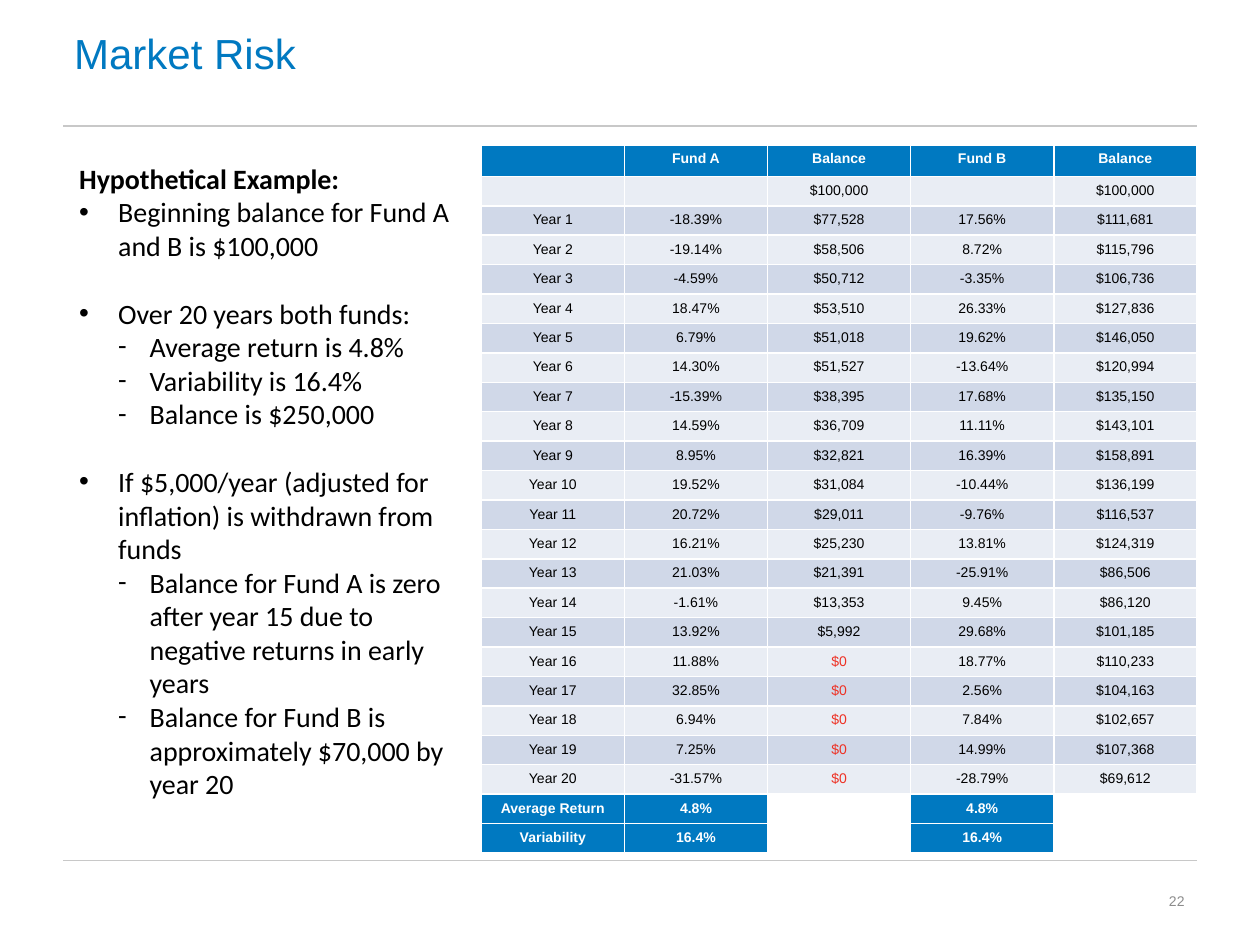
import pptx
import pptx.dml.color
import pptx.enum.shapes
import pptx.enum.text
import pptx.oxml.ns
import pptx.util
from lxml import etree

Inches = pptx.util.Inches
Pt = pptx.util.Pt
qn = pptx.oxml.ns.qn
ALIGN = pptx.enum.text.PP_ALIGN
MIDDLE = pptx.enum.text.MSO_ANCHOR.MIDDLE

COLORS = {
    "blue": "0079C1", "rule": "C8C8C8", "number": "8C8C8C", "black": "000000",
    "white": "FFFFFF", "red": "EE3124", "light": "E9EDF4", "dark": "D0D8E8",
}


def rgb(name):
    return pptx.dml.color.RGBColor.from_string(COLORS[name])


def write(paragraph, text, color, **font_values):
    run = paragraph.add_run()
    run.text = text
    run.font.color.rgb = rgb(color)
    for attribute, value in font_values.items():
        setattr(run.font, attribute, value)


deck = pptx.Presentation()
deck.slide_width, deck.slide_height = Inches(10), Inches(7.5)
slide = deck.slides.add_slide(deck.slide_layouts[6])

# Rules above and below the content
for y in (6.83, 1):
    rule = slide.shapes.add_connector(
        pptx.enum.shapes.MSO_CONNECTOR.STRAIGHT,
        Inches(0.5), Inches(y), Inches(9.5), Inches(y))
    rule.line.color.rgb = rgb("rule")
    rule.line.width = Pt(0.75)
    etree.SubElement(rule._element.spPr, qn("a:effectLst"))

# Title and slide number
for text, box, color, size, alignment in (
    ("Market Risk", (0.49, -0.08, 9, 1), "blue", 24, ALIGN.LEFT),
    ("22", (7.17, 6.95, 2.33, 0.4), "number", 8, ALIGN.RIGHT),
):
    frame = slide.shapes.add_textbox(*map(Inches, box)).text_frame
    frame.word_wrap = True
    frame.vertical_anchor = MIDDLE
    frame.paragraphs[0].alignment = alignment
    write(frame.paragraphs[0], text, color, name="Arial", size=Pt(size))

# Fund returns and balances
returns = [
    ("", "Fund A", "Balance", "Fund B", "Balance"),
    ("", "", "$100,000", "", "$100,000"),
    ("Year 1", "-18.39%", "$77,528", "17.56%", "$111,681"),
    ("Year 2", "-19.14%", "$58,506", "8.72%", "$115,796"),
    ("Year 3", "-4.59%", "$50,712", "-3.35%", "$106,736"),
    ("Year 4", "18.47%", "$53,510", "26.33%", "$127,836"),
    ("Year 5", "6.79%", "$51,018", "19.62%", "$146,050"),
    ("Year 6", "14.30%", "$51,527", "-13.64%", "$120,994"),
    ("Year 7", "-15.39%", "$38,395", "17.68%", "$135,150"),
    ("Year 8", "14.59%", "$36,709", "11.11%", "$143,101"),
    ("Year 9", "8.95%", "$32,821", "16.39%", "$158,891"),
    ("Year 10", "19.52%", "$31,084", "-10.44%", "$136,199"),
    ("Year 11", "20.72%", "$29,011", "-9.76%", "$116,537"),
    ("Year 12", "16.21%", "$25,230", "13.81%", "$124,319"),
    ("Year 13", "21.03%", "$21,391", "-25.91%", "$86,506"),
    ("Year 14", "-1.61%", "$13,353", "9.45%", "$86,120"),
    ("Year 15", "13.92%", "$5,992", "29.68%", "$101,185"),
    ("Year 16", "11.88%", "$0", "18.77%", "$110,233"),
    ("Year 17", "32.85%", "$0", "2.56%", "$104,163"),
    ("Year 18", "6.94%", "$0", "7.84%", "$102,657"),
    ("Year 19", "7.25%", "$0", "14.99%", "$107,368"),
    ("Year 20", "-31.57%", "$0", "-28.79%", "$69,612"),
    ("Average Return", "4.8%", "", "4.8%", ""),
    ("Variability", "16.4%", "", "16.4%", ""),
]
summary_start = len(returns) - 2
table_width, table_height, header_height = Inches(5.68), Inches(5.61), Inches(0.25)
funds = slide.shapes.add_table(
    len(returns), len(returns[0]), Inches(3.82), Inches(1.15),
    table_width, table_height).table
for column in funds.columns:
    column.width = table_width // len(returns[0])
for row in funds.rows:
    row.height = (table_height - header_height) // (len(returns) - 1)
funds.rows[0].height = header_height

for r, values in enumerate(returns):
    emphasised = r == 0 or r >= summary_start
    for c, value in enumerate(values):
        cell = funds.cell(r, c)
        # White borders go in ahead of the fill
        properties = cell._tc.get_or_add_tcPr()
        for side in ("lnL", "lnR", "lnT", "lnB"):
            border = etree.SubElement(properties, qn(f"a:{side}"), w=str(Pt(1)))
            solid = etree.SubElement(border, qn("a:solidFill"))
            etree.SubElement(solid, qn("a:srgbClr"), val=COLORS["white"])
        if r >= summary_start and not value:
            fill = "white"
        elif emphasised:
            fill = "blue"
        else:
            fill = "light" if r % 2 else "dark"
        cell.fill.solid()
        cell.fill.fore_color.rgb = rgb(fill)

        entry = cell.text_frame.paragraphs[0]
        entry.alignment = ALIGN.CENTER
        if value:
            color = "white" if emphasised else "red" if value == "$0" else "black"
            write(entry, value, color, name="Arial", size=Pt(8), bold=emphasised)
        else:
            # Small type keeps empty cells from stretching their row
            etree.SubElement(entry._p, qn("a:endParaRPr"), sz="800")

# Hypothetical example: bullet, space before in points, text
example = [
    ("", 0, "Hypothetical Example:"),
    ("•", 0, "Beginning balance for Fund A and B is $100,000"),
    ("•", 19.5, "Over 20 years both funds:"),
    ("-", 0, "Average return is 4.8%"),
    ("-", 0, "Variability is 16.4%"),
    ("-", 0, "Balance is $250,000"),
    ("•", 19.5, "If $5,000/year (adjusted for inflation) is withdrawn from funds"),
    ("-", 0, "Balance for Fund A is zero after year 15 due to negative returns in early years"),
    ("-", 0, "Balance for Fund B is approximately $70,000 by year 20"),
]
# Level, left margin, hanging indent and bullet font
bullets = {"•": (0, 0.31, -0.31, "Arial"), "-": (1, 0.56, -0.25, "Calibri")}
frame = slide.shapes.add_textbox(
    Inches(0.53), Inches(1.23), Inches(3.29), Inches(5.22)).text_frame
frame.word_wrap = True
for i, (bullet, gap, text) in enumerate(example):
    point = frame.add_paragraph() if i else frame.paragraphs[0]
    if bullet:
        level, margin, indent, bullet_font = bullets[bullet]
        layout = point._p.get_or_add_pPr()
        layout.set("marL", str(Inches(margin)))
        layout.set("indent", str(Inches(indent)))
        etree.SubElement(layout, qn("a:buFont"), typeface=bullet_font)
        etree.SubElement(layout, qn("a:buChar"), char=bullet)
        point.level = level
    if gap:
        point.space_before = Pt(gap)
    write(point, text, "black", name="Calibri", size=Pt(16), bold=not bullet)

deck.save("out.pptx")
